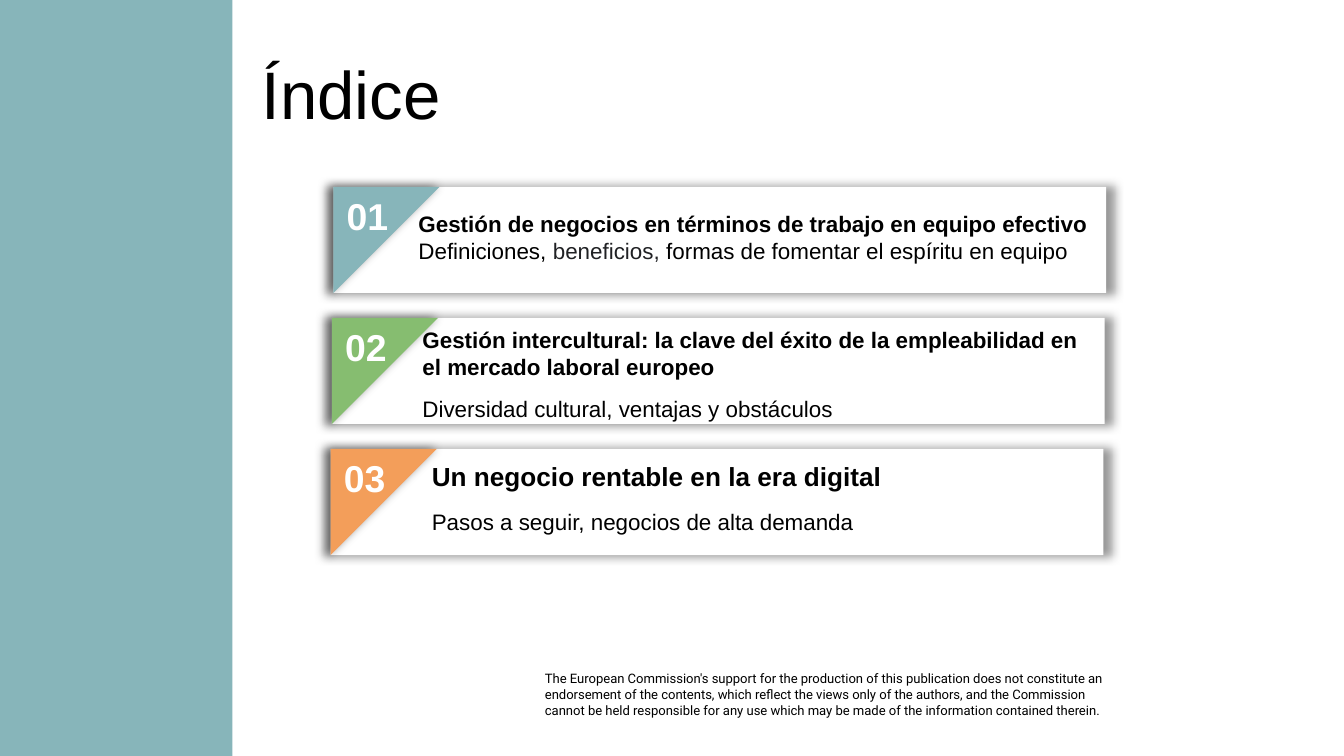
from lxml import etree
from pptx import Presentation
from pptx import util as u
from pptx.dml.color import RGBColor
from pptx.enum import shapes, text
from pptx.oxml.ns import qn

PX = 4572  # 200 px to the inch
SLIDE_WIDTH, SLIDE_HEIGHT = 2000, 1125

WHITE = RGBColor(0xFF, 0xFF, 0xFF)
BLACK = RGBColor(0x00, 0x00, 0x00)
CHARCOAL = RGBColor(0x20, 0x21, 0x24)
TEAL = RGBColor(0x87, 0xB5, 0xBA)
GREEN = RGBColor(0x86, 0xBD, 0x70)
ORANGE = RGBColor(0xF3, 0x9E, 0x5A)

CARD_LEFT, CARD_TOP = 496, 278
CARD_WIDTH, CARD_HEIGHT = 1150, 158
CARD_PITCH, CARD_DRIFT = 195, -2

# Each paragraph is a list of runs: (text, size, bold, colour)
CARDS = [
    {"color": TEAL, "box": (107, 25, 1038, 100), "after": 0, "spacing": 1.0,
     "paragraphs": [
         [("Gestión de negocios en términos de trabajo en equipo efectivo", 12, True, BLACK)],
         [("Definiciones, ", 12, False, BLACK),
          ("beneficios, ", 12, False, CHARCOAL),
          ("formas de fomentar el espíritu en equipo", 12, False, BLACK)]]},
    {"color": GREEN, "box": (115, 3, 1070, 234), "after": 8, "spacing": 1.0,
     "paragraphs": [
         [("Gestión intercultural: la clave del éxito de la empleabilidad en \n"
           "el mercado laboral europeo", 12, True, BLACK)],
         [("Diversidad cultural, ventajas y obstáculos", 12, False, BLACK)]]},
    {"color": ORANGE, "box": (131, 4, 1000, 134), "after": 8, "spacing": 1.07,
     "paragraphs": [
         [("Un negocio rentable en la era digital", 14, True, BLACK)],
         [("Pasos a seguir, negocios de alta demanda", 12, False, BLACK)]]},
]

DISCLAIMER = [
    "The European Commission's support for the production of this publication does not "
    "constitute an endorsement of the contents, which reflect the views only of the authors, "
    "and the Commission",
    "cannot be held responsible for any use which may be made of the information "
    "contained therein.",
]


def emu(*lengths):
    return [u.Emu(length * PX) for length in lengths]


def format_run(run, size, bold, color, font="Arial"):
    run.font.name = font
    run.font.size = u.Pt(size)
    run.font.bold = bold
    run.font.color.rgb = color


def add_shape(parent, preset, box, color):
    shape = parent.shapes.add_shape(preset, *emu(*box))
    shape.shadow.inherit = False
    shape.fill.solid()
    shape.fill.fore_color.rgb = color
    shape.line.fill.background()
    return shape


def add_glow_shadow(shape):
    """Give the shape a soft black shadow, slightly larger than itself, with no offset."""
    effects = shape._element.spPr.find(qn("a:effectLst"))
    shadow = etree.SubElement(effects, qn("a:outerShdw"), blurRad=str(u.Pt(5)),
                              sx="102000", sy="102000", algn="ctr", rotWithShape="0")
    color = etree.SubElement(shadow, qn("a:srgbClr"), val=str(BLACK))
    etree.SubElement(color, qn("a:alpha"), val="40000")


def add_text(slide, box, paragraphs, font="Arial", after=0, spacing=1.0, inset=True):
    frame = slide.shapes.add_textbox(*emu(*box)).text_frame
    frame.word_wrap = True
    if not inset:
        frame.margin_left = frame.margin_right = 0
        frame.margin_top = frame.margin_bottom = 0
    for index, runs in enumerate(paragraphs):
        paragraph = frame.add_paragraph() if index else frame.paragraphs[0]
        paragraph.space_after = u.Pt(after)
        paragraph.line_spacing = spacing
        for content, size, bold, color in runs:
            for number, line in enumerate(content.split("\n")):
                if number:
                    paragraph.add_line_break()
                run = paragraph.add_run()
                run.text = line
                format_run(run, size, bold, color, font)


def add_title(slide, box):
    title = slide.shapes.title
    title.left, title.top, title.width, title.height = emu(*box)
    frame = title.text_frame
    frame.text = "Índice"
    frame.auto_size = text.MSO_AUTO_SIZE.NONE
    frame.vertical_anchor = text.MSO_ANCHOR.MIDDLE
    paragraph = frame.paragraphs[0]
    paragraph.alignment = text.PP_ALIGN.LEFT
    format_run(paragraph.runs[0], 36, False, BLACK)


def add_card(slide, left, top, number, card):
    group = slide.shapes.add_group_shape()
    panel = add_shape(group, shapes.MSO_SHAPE.RECTANGLE,
                      (left, top, CARD_WIDTH, CARD_HEIGHT), WHITE)
    corner = add_shape(group, shapes.MSO_SHAPE.RIGHT_TRIANGLE,
                       (left, top, CARD_HEIGHT, CARD_HEIGHT), card["color"])
    corner.rotation = 90
    for shape in (panel, corner):
        add_glow_shadow(shape)
    add_text(slide, (left, top, 116, 88), [[(f"{number:02}", 20, True, WHITE)]])
    x, y, width, height = card["box"]
    add_text(slide, (left + x, top + y, width, height), card["paragraphs"],
             after=card["after"], spacing=card["spacing"])


def main():
    presentation = Presentation()
    presentation.slide_width, presentation.slide_height = emu(SLIDE_WIDTH, SLIDE_HEIGHT)
    slide = presentation.slides.add_slide(presentation.slide_layouts[5])

    add_text(slide, (811, 998, 834, 70), [[(line, 7, False, BLACK)] for line in DISCLAIMER],
             font="Roboto", inset=False)
    add_shape(slide, shapes.MSO_SHAPE.RECTANGLE, (0, 0, 346, SLIDE_HEIGHT), TEAL)
    add_title(slide, (369, 75, 1440, 126))
    for index, card in enumerate(CARDS):
        add_card(slide, CARD_LEFT + index * CARD_DRIFT, CARD_TOP + index * CARD_PITCH,
                 index + 1, card)

    presentation.save("out.pptx")


if __name__ == "__main__":
    main()
